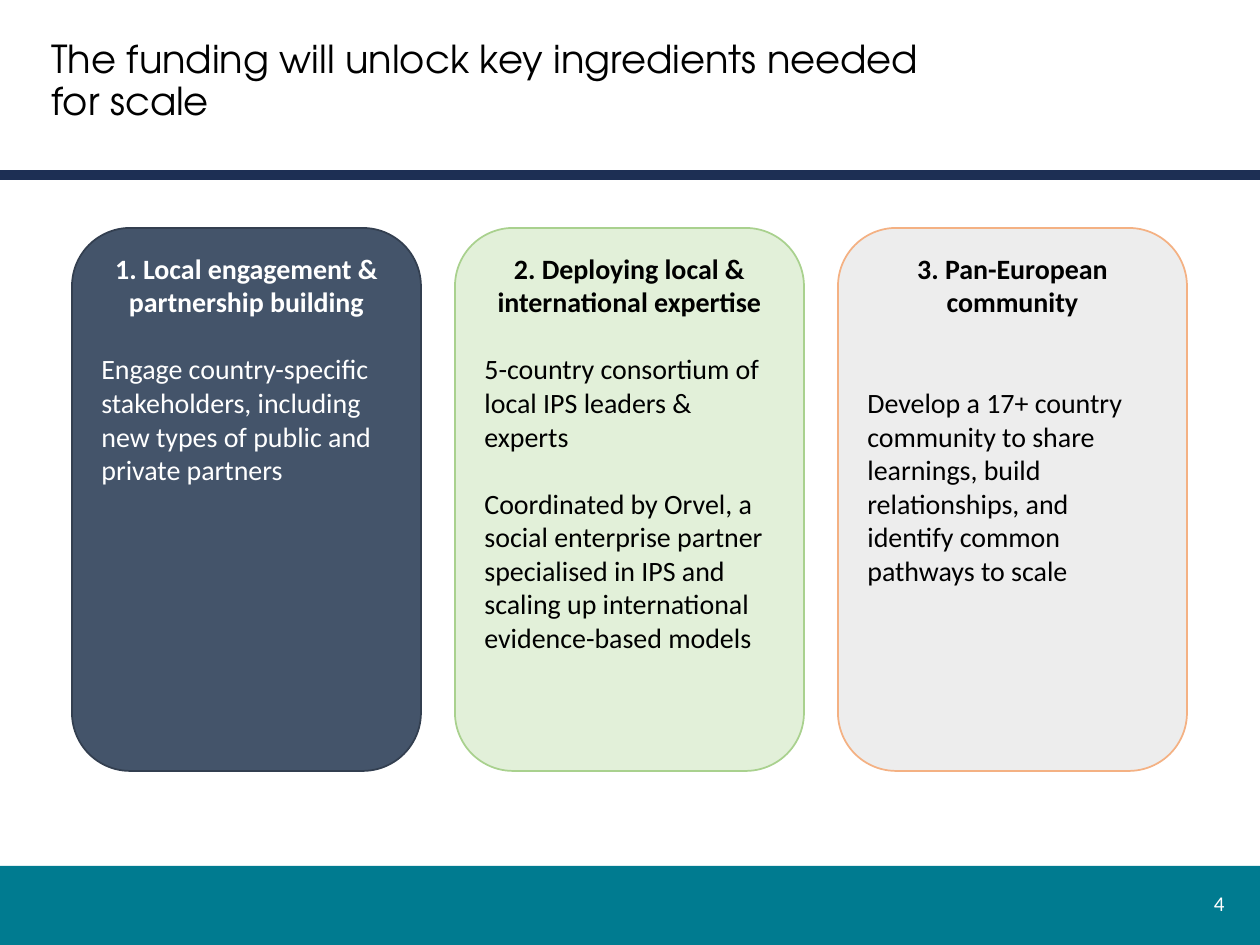
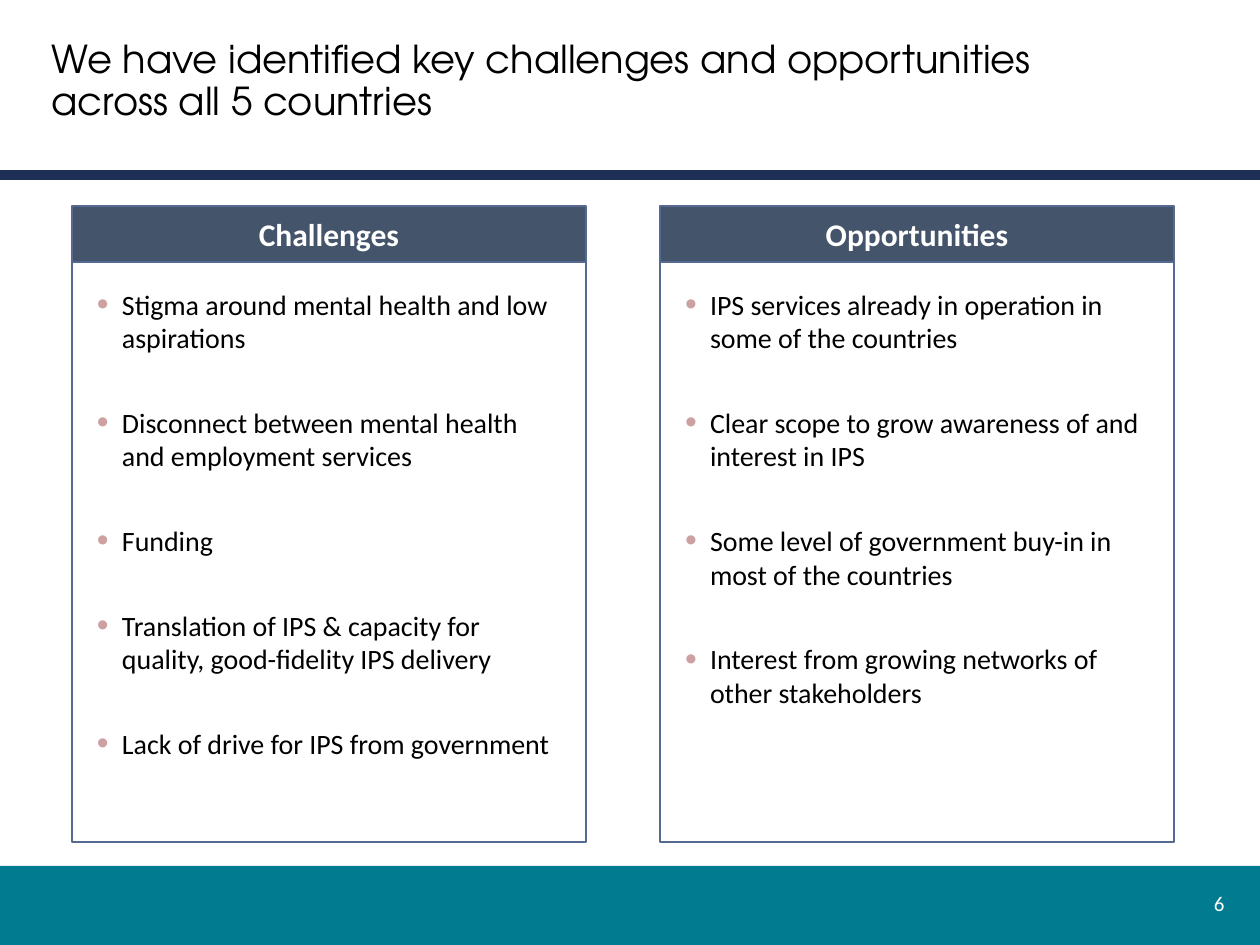
from lxml import etree
from pptx import Presentation, util as u
from pptx.dml.color import RGBColor
from pptx.enum import shapes, text
from pptx.oxml.ns import qn

PX = 914400 / 126
PAGE_W, PAGE_H = 1260, 945
TEAL, NAVY, SLATE, EDGE = "007B90", "1D2F54", "44546A", "556991"
BLACK, WHITE, ROSE = "000000", "FFFFFF", "CDA1A1"
BODY_FONT, TITLE_FONT = "Calibri", "TeX Gyre Adventor"
TITLE_ONLY, COMPARISON = 5, 4
LINE_PT = 19.2
BULLET_GAP_PT = 29.2

CARDS = [
    (SLATE, "333F50", WHITE, "1. Local engagement & partnership building", 1,
     ["Engage country-specific stakeholders, including new types of public "
      "and private partners"]),
    ("E2F0D9", "A9D18E", BLACK, "2. Deploying local & international expertise", 1,
     ["5-country consortium of local IPS leaders & experts",
      "Coordinated by Orvel, a social enterprise partner specialised in IPS "
      "and scaling up international evidence-based models"]),
    ("EDEDED", "F4B183", BLACK, "3. Pan-European community", 2,
     ["Develop a 17+ country community to share learnings, build "
      "relationships, and identify common pathways to scale"]),
]

PANELS = [
    ("Challenges",
     ["Stigma around mental health and low aspirations",
      "Disconnect between mental health and employment services",
      "Funding",
      "Translation of IPS & capacity for quality, good-fidelity IPS delivery",
      "Lack of drive for IPS from government"]),
    ("Opportunities",
     ["IPS services already in operation in some of the countries",
      "Clear scope to grow awareness of and interest in IPS",
      "Some level of government buy-in in most of the countries",
      "Interest from growing networks of other stakeholders"]),
]


def px(length):
    return u.Emu(round(length * PX))


def color(hex_string):
    return RGBColor.from_string(hex_string)


def place(shape, box):
    shape.left, shape.top, shape.width, shape.height = map(px, box)


def paint(shape, fill, line=None, width=1):
    shape.fill.solid()
    shape.fill.fore_color.rgb = color(fill)
    if line:
        shape.line.color.rgb = color(line)
        shape.line.width = u.Pt(width)
    else:
        shape.line.fill.background()


def add_panel_shape(page, kind, box, *look):
    shape = page.shapes.add_shape(kind, *map(px, box))
    shape.shadow.inherit = False
    paint(shape, *look)
    return shape


def set_frame(shape, anchor, margins=None):
    frame = shape.text_frame
    frame.word_wrap = True
    frame.auto_size = text.MSO_AUTO_SIZE.NONE
    frame.vertical_anchor = anchor
    if margins is not None:
        frame.margin_left = frame.margin_right = px(margins)
        frame.margin_top = frame.margin_bottom = px(margins)
    return frame


def write(frame, content, size, ink, font=BODY_FONT, bold=False,
          align=text.PP_ALIGN.LEFT, before=0, spacing=None, bullet=False):
    para = frame.paragraphs[0]
    if para.runs:
        para = frame.add_paragraph()
    para.add_run().text = content
    if bullet:
        add_bullet(para)
    para.alignment = align
    para.space_before = u.Pt(before)
    if spacing:
        para.line_spacing = spacing
    para.font.name, para.font.size, para.font.bold = font, u.Pt(size), bold
    para.font.color.rgb = color(ink)


def add_bullet(para):
    props = para._p.get_or_add_pPr()
    props.set("marL", str(px(25)))
    props.set("indent", str(px(-25)))
    tint = etree.SubElement(props, qn("a:buClr"))
    etree.SubElement(tint, qn("a:srgbClr"), val=ROSE)
    etree.SubElement(props, qn("a:buSzPct"), val="120000")
    etree.SubElement(props, qn("a:buChar"), char="•")


def add_page(deck, layout, title, title_width, number):
    page = deck.slides.add_slide(deck.slide_layouts[layout])
    add_panel_shape(page, shapes.MSO_SHAPE.RECTANGLE,
                    (0, 866, PAGE_W, PAGE_H - 866), TEAL)
    rule = page.shapes.add_connector(shapes.MSO_CONNECTOR.STRAIGHT,
                                     *map(px, (0, 175, PAGE_W, 175)))
    rule.line.color.rgb = color(NAVY)
    rule.line.width = u.Pt(6)
    etree.SubElement(rule._element.spPr, qn("a:effectLst"))

    heading = page.shapes.title
    place(heading, (39, 29, title_width, 106))
    write(set_frame(heading, text.MSO_ANCHOR.MIDDLE), title, 22, BLACK,
          font=TITLE_FONT, spacing=0.9)

    page_number = page.shapes.add_textbox(*map(px, (1183, 878, 54, 50)))
    write(set_frame(page_number, text.MSO_ANCHOR.MIDDLE), number, 12, WHITE,
          align=text.PP_ALIGN.RIGHT)
    return page


def add_card(page, box, fill, line, ink, heading, gap_lines, passages):
    card = add_panel_shape(page, shapes.MSO_SHAPE.ROUNDED_RECTANGLE,
                           box, fill, line)
    frame = set_frame(card, text.MSO_ANCHOR.TOP)
    spacing = u.Pt(LINE_PT)
    write(frame, heading, 16, ink, bold=True, align=text.PP_ALIGN.CENTER,
          spacing=spacing)
    for passage in passages:
        write(frame, passage, 16, ink, before=gap_lines * LINE_PT,
              spacing=spacing)


def fill_panel(header, listing, box, heading, items):
    left, top, width, height = box
    header_height = 56
    place(header, (left, top, width, header_height))
    paint(header, SLATE, EDGE, 0.75)
    write(set_frame(header, text.MSO_ANCHOR.MIDDLE, 0), heading, 18, WHITE,
          bold=True, align=text.PP_ALIGN.CENTER)

    place(listing, (left, top + header_height, width, height - header_height))
    paint(listing, WHITE, EDGE, 0.75)
    frame = set_frame(listing, text.MSO_ANCHOR.TOP, 25)
    for index, item in enumerate(items):
        write(frame, item, 16, BLACK, bullet=True,
              before=BULLET_GAP_PT if index else 0)


def build_ingredients(deck):
    page = add_page(deck, TITLE_ONLY,
                    "The funding will unlock key ingredients needed for scale",
                    945, "4")
    for index, card in enumerate(CARDS):
        add_card(page, (72 + index * 383, 228, 349, 543), *card)


def build_comparison(deck):
    page = add_page(deck, COMPARISON,
                    "We have identified key challenges and opportunities "
                    "across all 5 countries", 1008, "6")
    slots = list(page.placeholders)[1:]
    for index, panel in enumerate(PANELS):
        header, listing = slots[2 * index:2 * index + 2]
        fill_panel(header, listing, (72 + index * 588, 206, 514, 636), *panel)


def main():
    deck = Presentation()
    deck.slide_width, deck.slide_height = px(PAGE_W), px(PAGE_H)
    build_ingredients(deck)
    build_comparison(deck)
    deck.save("out.pptx")


if __name__ == "__main__":
    main()
